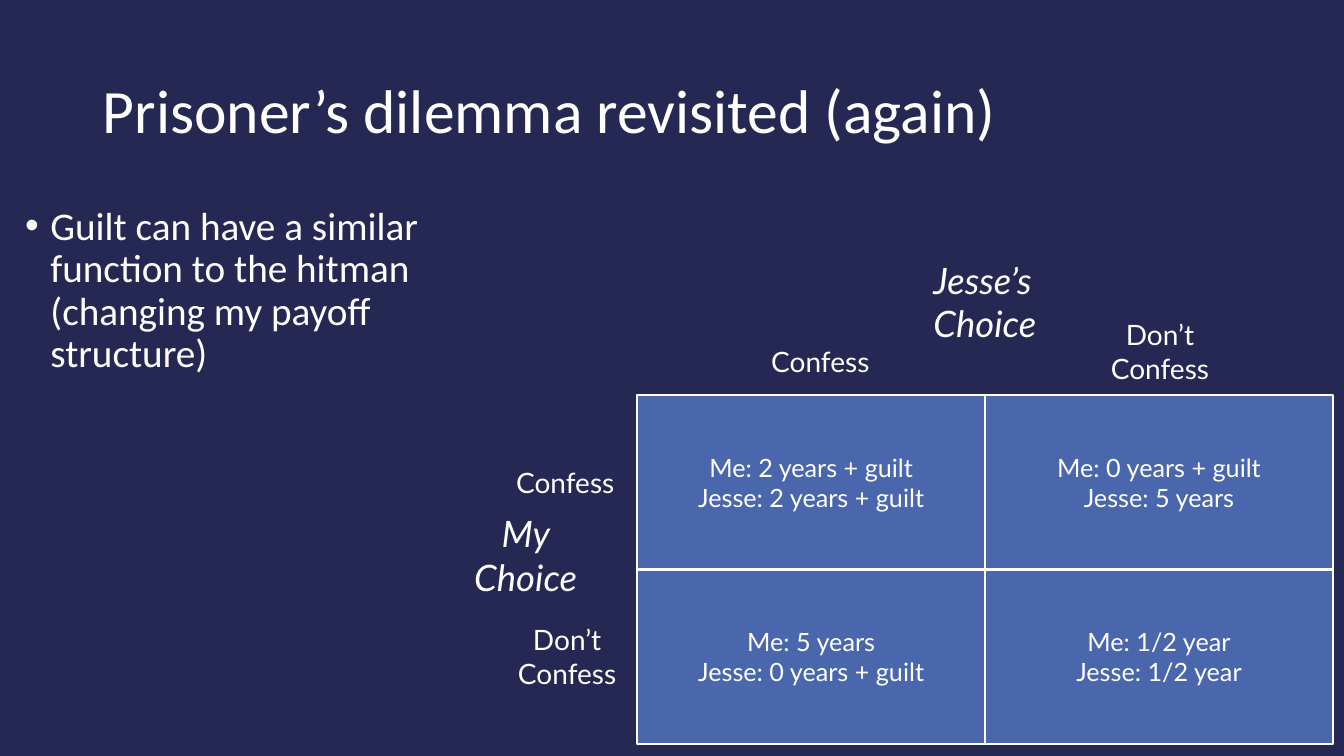
import pptx
import pptx.util
import pptx.dml.color
import pptx.enum.shapes
import pptx.enum.text

Inches = pptx.util.Inches
Pt = pptx.util.Pt
RGBColor = pptx.dml.color.RGBColor
ALIGN = pptx.enum.text.PP_ALIGN
ANCHOR = pptx.enum.text.MSO_ANCHOR

NAVY = RGBColor(0x24, 0x28, 0x52)
BLUE = RGBColor(0x4A, 0x66, 0xAC)
WHITE = RGBColor(0xFF, 0xFF, 0xFF)

TITLE = "Prisoner’s dilemma revisited (again)"
POINT = "Guilt can have a similar function to the hitman (changing my payoff structure)"
PAYOFFS = [
    ["Me: 2 years + guilt\nJesse: 2 years + guilt", "Me: 0 years + guilt\nJesse: 5 years"],
    ["Me: 5 years\nJesse: 0 years + guilt", "Me: 1/2 year\nJesse: 1/2 year"],
]
# text, left, top, width, height, size, italic, alignment
LABELS = [
    ("Confess", 5.02, 4.57, 1.21, 0.44, 20, False, ALIGN.LEFT),
    ("Don’t\nConfess", 5.02, 6.13, 1.21, 0.77, 20, False, ALIGN.CENTER),
    ("Confess", 7.55, 3.37, 1.21, 0.44, 20, False, ALIGN.LEFT),
    ("Don’t\nConfess", 10.9, 3.1, 1.21, 0.77, 20, False, ALIGN.CENTER),
    ("My\nChoice", 4.55, 5.02, 1.33, 0.98, 26, True, ALIGN.CENTER),
    ("Jesse’s\nChoice", 9.16, 2.51, 1.33, 0.98, 26, True, ALIGN.LEFT),
]
GRID_X, GRID_Y = 6.32, 3.92
CELL_W, CELL_H = 3.45, 1.73


def write(shape, text, size, font, align, italic=None, spacing=None):
    frame = shape.text_frame
    frame.text = text
    for para in frame.paragraphs:
        para.alignment = align
        para.line_spacing = spacing
        for run in para.runs:
            run.font.name = font
            run.font.size = Pt(size)
            run.font.italic = italic
            run.font.color.rgb = WHITE
    return frame


def place(shape, left, top, width, height):
    shape.left, shape.top = Inches(left), Inches(top)
    shape.width, shape.height = Inches(width), Inches(height)


def main():
    deck = pptx.Presentation()
    deck.slide_width, deck.slide_height = Inches(13.33), Inches(7.5)
    slide = deck.slides.add_slide(deck.slide_layouts[1])
    slide.background.fill.solid()
    slide.background.fill.fore_color.rgb = NAVY

    title, body = slide.placeholders
    place(title, 0.92, 0.4, 11.5, 1.45)
    frame = write(title, TITLE, 44, "Calibri", ALIGN.LEFT, spacing=0.9)
    frame.vertical_anchor = ANCHOR.MIDDLE

    place(body, 0.15, 2, 4.64, 5.38)
    frame = write(body, POINT, 28, "Calibri", ALIGN.LEFT, spacing=0.9)
    para = frame.paragraphs[0]
    para.space_before = Pt(10)
    props = para._p.get_or_add_pPr()
    props.set("marL", str(Inches(0.25)))
    props.set("indent", str(Inches(-0.25)))

    for row, pair in enumerate(PAYOFFS):
        for col, text in enumerate(pair):
            cell = slide.shapes.add_shape(
                pptx.enum.shapes.MSO_SHAPE.RECTANGLE,
                Inches(GRID_X + col * CELL_W), Inches(GRID_Y + row * CELL_H),
                Inches(CELL_W), Inches(CELL_H))
            cell.shadow.inherit = False
            cell.fill.solid()
            cell.fill.fore_color.rgb = BLUE
            cell.line.color.rgb = WHITE
            cell.line.width = Pt(1.5)
            frame = write(cell, text, 18, "Lato", ALIGN.CENTER)
            frame.vertical_anchor = ANCHOR.MIDDLE

    for text, left, top, width, height, size, italic, align in LABELS:
        box = slide.shapes.add_textbox(
            Inches(left), Inches(top), Inches(width), Inches(height))
        frame = write(box, text, size, "Lato", align, italic)
        frame.word_wrap = False
        frame.auto_size = pptx.enum.text.MSO_AUTO_SIZE.SHAPE_TO_FIT_TEXT

    deck.save("out.pptx")


if __name__ == "__main__":
    main()
